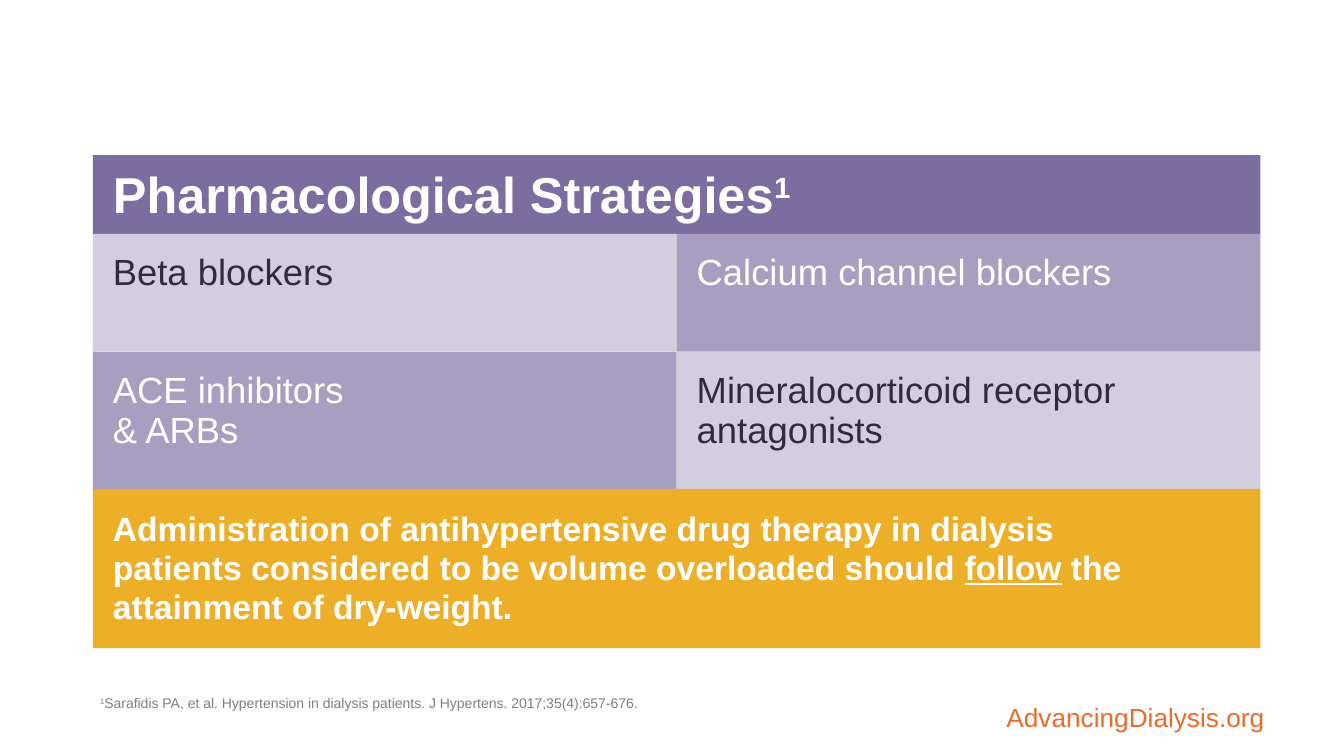
"""Build a slide of pharmacological strategies for hypertension in dialysis patients."""
from dataclasses import dataclass

from lxml import etree
from pptx import Presentation
from pptx.dml.color import RGBColor
from pptx.enum.shapes import MSO_SHAPE
from pptx.enum.text import MSO_ANCHOR, MSO_AUTO_SIZE, PP_ALIGN
from pptx.oxml.ns import qn
from pptx.util import Inches, Pt

RECTANGLE = MSO_SHAPE.RECTANGLE
TOP, BOTTOM = MSO_ANCHOR.TOP, MSO_ANCHOR.BOTTOM
LEFT, RIGHT = PP_ALIGN.LEFT, PP_ALIGN.RIGHT
FIXED_SIZE = MSO_AUTO_SIZE.NONE


@dataclass(frozen=True)
class Theme:
    """Colours, font and type sizes of the slide."""
    font: str = "Arial"
    white: str = "FFFFFF"
    ink: str = "312B42"
    purple: str = "7B6DA0"
    mauve: str = "A79EC0"
    lilac: str = "D3CEDF"
    gold: str = "EDAE28"
    orange: str = "ED6B2A"
    grey: str = "7F7F7F"
    heading: float = 36
    strategy: float = 26
    advice: float = 24
    website: float = 18.7
    reference: float = 10


THEME = Theme()


def place(shape, box, insets, anchor, fill=None):
    """Position a shape, set up its text frame and return its first paragraph."""
    shape.left, shape.top, shape.width, shape.height = map(Inches, box)
    if fill:
        shape.fill.solid()
        shape.fill.fore_color.rgb = RGBColor.from_string(fill)
    frame = shape.text_frame
    frame.word_wrap = True
    frame.auto_size = FIXED_SIZE
    frame.vertical_anchor = anchor
    (frame.margin_left, frame.margin_top,
     frame.margin_right, frame.margin_bottom) = map(Inches, insets)
    paragraph = frame.paragraphs[0]
    paragraph.alignment = LEFT
    paragraph.space_before = Pt(0)
    return paragraph


def add_run(paragraph, text, size, color, bold=False, underline=None, superscript=False):
    """Append one formatted run."""
    run = paragraph.add_run()
    run.text = text
    run.font.name = THEME.font
    run.font.size = Pt(size)
    run.font.bold = bold
    run.font.underline = underline
    run.font.color.rgb = RGBColor.from_string(color)
    if superscript:
        run.font._element.set("baseline", "30000")


presentation = Presentation()
presentation.slide_width = Inches(13.33)
presentation.slide_height = Inches(7.5)
slide = presentation.slides.add_slide(presentation.slide_layouts[1])

panel_left, panel_width = 0.92, 11.58
column_width = panel_width / 2

heading = place(slide.shapes.title, (panel_left, 1.54, panel_width, 0.78),
                (0.2, 0.04, 0.07, 0.1), BOTTOM, THEME.purple)
add_run(heading, "Pharmacological Strategies", THEME.heading, THEME.white, bold=True)
add_run(heading, "1", THEME.heading, THEME.white, bold=True, superscript=True)

strategy_rows = [
    (2.32, 1.17, ["Beta blockers", "Calcium channel blockers"]),
    (3.49, 1.36, ["ACE inhibitors\n& ARBs", "Mineralocorticoid receptor antagonists"]),
]
for row, (top, height, strategies) in enumerate(strategy_rows):
    for column, strategy in enumerate(strategies):
        is_light = (row + column) % 2 == 0
        cell = slide.shapes.add_shape(RECTANGLE, 0, 0, 0, 0)
        cell.shadow.inherit = False
        cell.line.fill.background()
        paragraph = place(cell, (panel_left + column * column_width, top, column_width, height),
                          (0.2, 0.2, 0.1, 0.05), TOP, THEME.lilac if is_light else THEME.mauve)
        paragraph.line_spacing = Pt(28)
        for index, line in enumerate(strategy.split("\n")):
            if index:
                paragraph.add_line_break()
            add_run(paragraph, line, THEME.strategy, THEME.ink if is_light else THEME.white)

advice_band = slide.shapes.add_shape(RECTANGLE, 0, 0, 0, 0)
advice_band.shadow.inherit = False
advice_band.line.fill.background()
advice = place(advice_band, (panel_left, 4.85, panel_width, 1.58),
               (0.2, 0.2, 0.9, 0.05), TOP, THEME.gold)
advice.line_spacing = Pt(28)
for text, underline in [
    ("Administration of antihypertensive drug therapy in dialysis patients "
     "considered to be volume overloaded should ", None),
    ("follow", True),
    (" the attainment of dry-weight.", None),
]:
    add_run(advice, text, THEME.advice, THEME.white, bold=True, underline=underline)

reference = place(slide.placeholders[1], (panel_left, 6.87, 8.31, 0.31),
                  (0.07, 0.04, 0.07, 0.04), TOP)
reference.line_spacing = 0.9
properties = reference._p.get_or_add_pPr()
properties.set("marL", "0")
properties.set("indent", "0")
etree.SubElement(properties, qn("a:buNone"))
add_run(reference, "1", THEME.reference, THEME.grey, superscript=True)
add_run(reference, "Sarafidis PA, et al. Hypertension in dialysis patients. "
        "J Hypertens. 2017;35(4):657-676.", THEME.reference, THEME.grey)

website = place(slide.shapes.add_textbox(0, 0, 0, 0), (8.12, 6.66, 4.53, 0.61),
                (0.11, 0, 0.11, 0), BOTTOM)
website.alignment = RIGHT
website.line_spacing = 0.9
add_run(website, "AdvancingDialysis.org", THEME.website, THEME.orange)

presentation.save("out.pptx")
